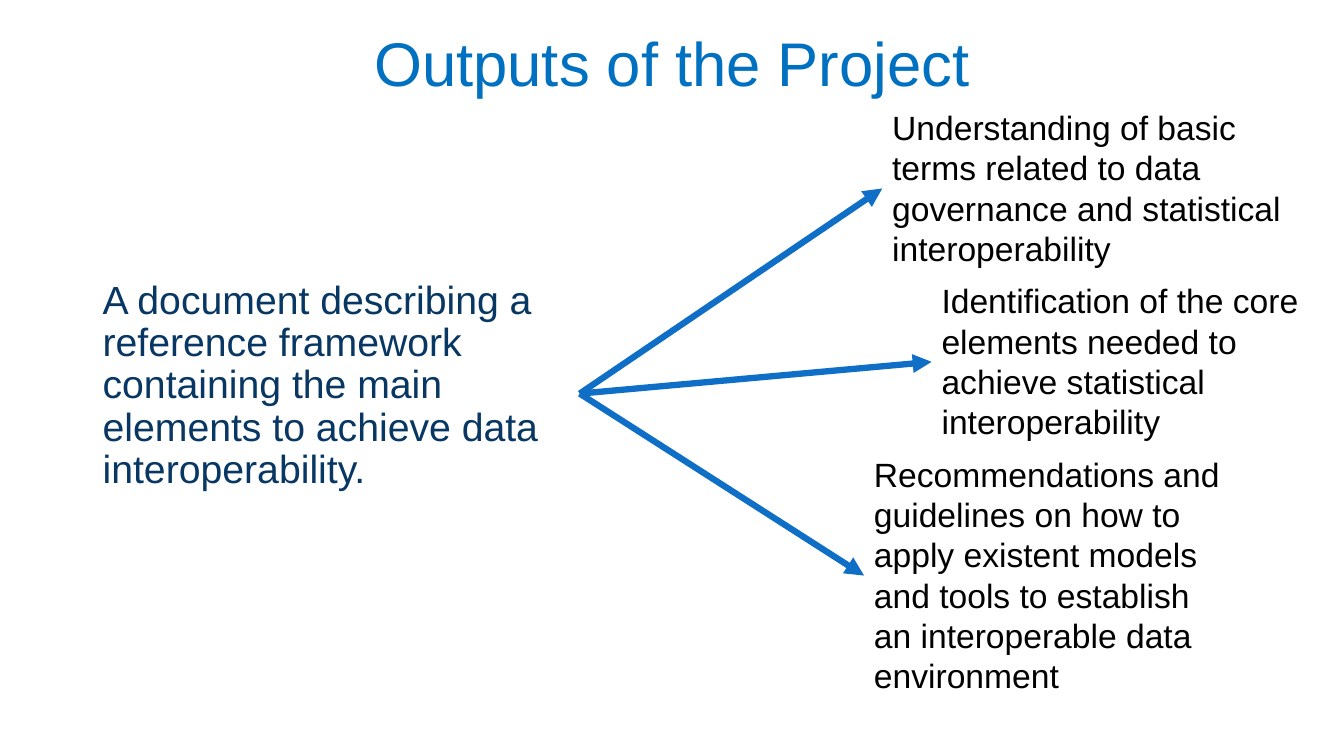
from dataclasses import dataclass

from lxml.etree import SubElement
from pptx import Presentation
from pptx.dml.color import RGBColor
from pptx.enum.shapes import MSO_CONNECTOR
from pptx.enum.text import MSO_ANCHOR, MSO_AUTO_SIZE, PP_ALIGN
from pptx.oxml.ns import qn
from pptx.util import Inches, Pt

RIGHT_SIDE, LEFT_SIDE = 3, 1


@dataclass(frozen=True)
class Theme:
    font: str = "Arial"
    title_color: str = "0070C0"
    document_color: str = "083763"
    output_color: str = "000000"
    arrow_color: str = "0F6FC6"
    title_size: float = 44
    document_size: float = 28
    output_size: float = 24
    arrow_width: float = 4.5


class SlideBuilder:
    def __init__(self, presentation, theme):
        self.theme = theme
        self.slide = presentation.slides.add_slide(presentation.slide_layouts[5])

    def set_text(self, shape, text, size, color, line_spacing):
        frame = shape.text_frame
        frame.word_wrap = True
        frame.text = text
        paragraph = frame.paragraphs[0]
        paragraph.line_spacing = line_spacing
        paragraph.font.name = self.theme.font
        paragraph.font.size = Pt(size)
        paragraph.font.color.rgb = RGBColor.from_string(color)
        return paragraph

    def title(self, text, left, top, width, height):
        shape = self.slide.shapes.title
        shape.left, shape.top = Inches(left), Inches(top)
        shape.width, shape.height = Inches(width), Inches(height)
        paragraph = self.set_text(
            shape, text, self.theme.title_size, self.theme.title_color, 0.9)
        paragraph.alignment = PP_ALIGN.CENTER
        shape.text_frame.vertical_anchor = MSO_ANCHOR.MIDDLE
        shape.text_frame.auto_size = MSO_AUTO_SIZE.NONE

    def text_box(self, text, left, top, width, height, size, color, line_spacing=1.0):
        shape = self.slide.shapes.add_textbox(
            Inches(left), Inches(top), Inches(width), Inches(height))
        self.set_text(shape, text, size, color, line_spacing)
        return shape

    def arrow(self, source, target):
        """Join the right side of source to the left side of target."""
        connector = self.slide.shapes.add_connector(MSO_CONNECTOR.STRAIGHT, 0, 0, 0, 0)
        connector.begin_connect(source, RIGHT_SIDE)
        connector.end_connect(target, LEFT_SIDE)
        connector.line.color.rgb = RGBColor.from_string(self.theme.arrow_color)
        connector.line.width = Pt(self.theme.arrow_width)
        properties = connector.element.spPr
        SubElement(properties.find(qn("a:ln")), qn("a:tailEnd"), type="triangle")
        SubElement(properties, qn("a:effectLst"))


# Text, left, width, height of each output, stacked from top to bottom
OUTPUTS = [
    ("Understanding of basic terms related to data governance and statistical "
     "interoperability", 8.75, 4.09, 1.72),
    ("Identification of the core elements needed to achieve statistical "
     "interoperability", 9.24, 4.09, 1.72),
    ("Recommendations and guidelines on how to apply existent models and tools to "
     "establish an interoperable data environment", 8.57, 3.67, 2.52),
]


def main():
    presentation = Presentation()
    presentation.slide_width = Inches(13.33)
    presentation.slide_height = Inches(7.5)
    theme = Theme()
    builder = SlideBuilder(presentation, theme)

    builder.title("Outputs of the Project", 0.92, 0.1, 11.5, 1.13)
    document = builder.text_box(
        "A document describing a reference framework containing the main elements "
        "to achieve data interoperability.",
        0.92, 2.73, 4.83, 2.35, theme.document_size, theme.document_color, 0.9)

    top = 1.01
    for text, left, width, height in OUTPUTS:
        output = builder.text_box(
            text, left, top, width, height, theme.output_size, theme.output_color)
        builder.arrow(document, output)
        top += height

    presentation.save("out.pptx")


if __name__ == "__main__":
    main()
